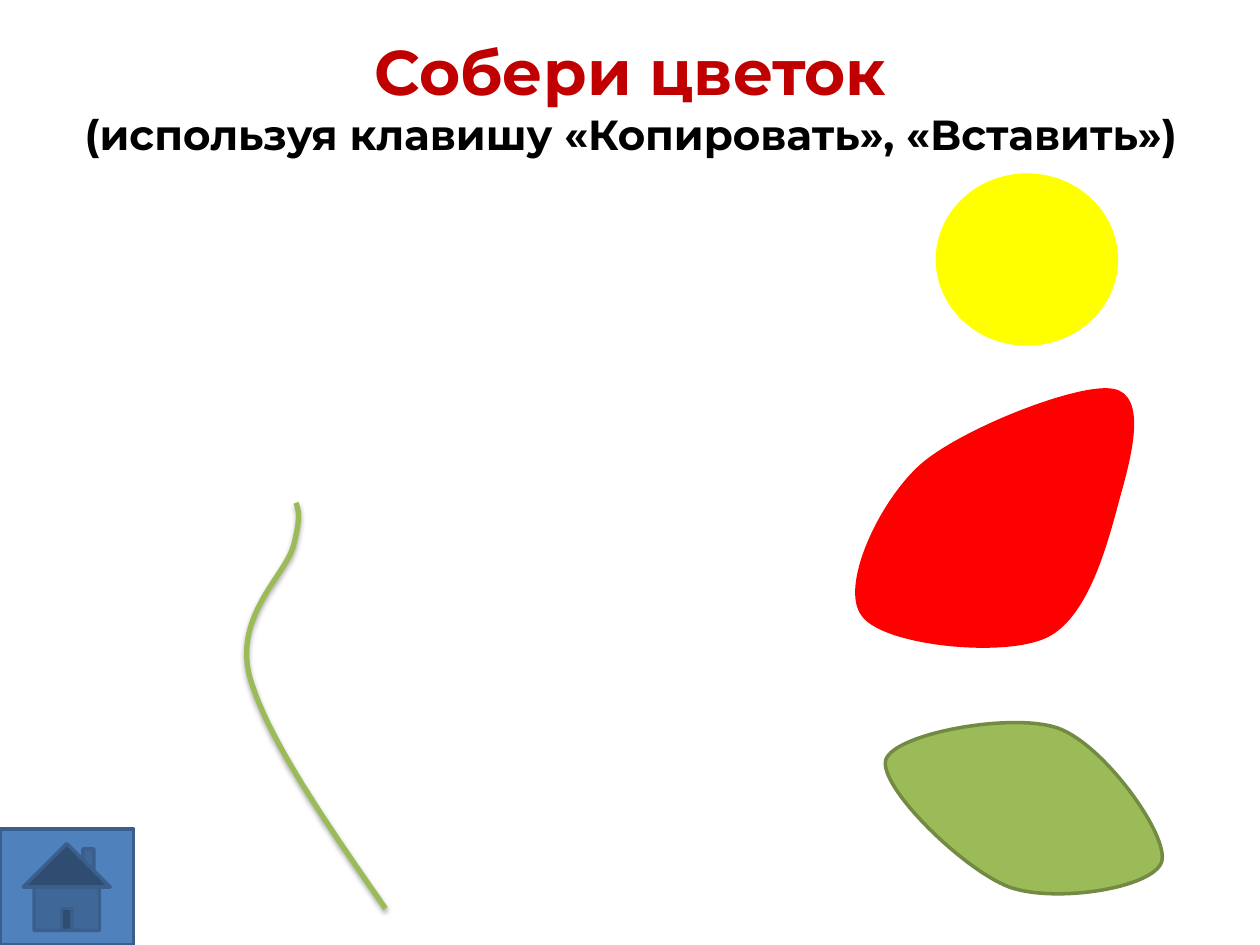
from lxml import etree
from pptx import Presentation
from pptx.dml.color import RGBColor
from pptx.enum.shapes import MSO_SHAPE
from pptx.enum.text import MSO_ANCHOR, MSO_AUTO_SIZE, PP_ALIGN
from pptx.oxml import parse_xml
from pptx.oxml.ns import nsdecls, qn
from pptx.util import Inches, Pt


def color(value):
    return RGBColor.from_string(value)


def add_curve(shapes, points, close):
    """Draw a start point followed by cubic segments of three points each."""
    start, *rest = points
    builder = shapes.build_freeform(*start, scale=Inches(1) / 100)
    builder.add_line_segments(rest, close=close)
    shape = builder.convert_to_shape()
    outline = next(shape._element.iter(qn("a:path")))
    lines = outline.findall(qn("a:lnTo"))[:len(rest)]
    for index in range(0, len(lines), 3):
        cubic = etree.Element(qn("a:cubicBezTo"))
        lines[index].addprevious(cubic)
        for line in lines[index:index + 3]:
            cubic.append(line[0])
            outline.remove(line)
    for extra in outline.findall(qn("a:lnTo")):
        outline.remove(extra)
    return shape


presentation = Presentation()
presentation.slide_width = Inches(10)
presentation.slide_height = Inches(7.5)
slide = presentation.slides.add_slide(presentation.slide_layouts[5])
shapes = slide.shapes

# Title
title = shapes.title
title.left, title.top = Inches(0.2), Inches(0.21)
title.width, title.height = Inches(9.61), Inches(1.11)
frame = title.text_frame
frame.word_wrap = True
frame.auto_size = MSO_AUTO_SIZE.SHAPE_TO_FIT_TEXT
frame.vertical_anchor = MSO_ANCHOR.TOP
frame.text = "Собери цветок\n(используя клавишу «Копировать», «Вставить»)"
for paragraph, size, text_color in zip(frame.paragraphs, (36, 24), ("C00000", "000000")):
    paragraph.alignment = PP_ALIGN.CENTER
    paragraph.font.name = "Montserrat"
    paragraph.font.size = Pt(size)
    paragraph.font.bold = True
    paragraph.font.color.rgb = color(text_color)

# Flower parts, with curve points in hundredths of an inch
stem = add_curve(shapes, [
    (306, 721), (258, 652), (211, 584), (198, 536), (186, 488),
    (227, 456), (233, 433), (239, 410), (237, 405), (235, 399),
], close=False)
center = shapes.add_shape(
    MSO_SHAPE.OVAL, Inches(7.44), Inches(1.39), Inches(1.42), Inches(1.34))
petal = add_curve(shapes, [
    (888, 393), (879, 426), (864, 489), (830, 505), (796, 521),
    (701, 511), (685, 488), (668, 466), (698, 400), (731, 370),
    (764, 341), (857, 305), (883, 310), (909, 314), (897, 361), (888, 393),
], close=True)
leaf = add_curve(shapes, [
    (922, 684), (915, 705), (837, 717), (801, 704), (764, 690),
    (697, 624), (703, 603), (710, 582), (804, 565), (840, 578),
    (876, 591), (928, 663), (922, 684),
], close=True)
home_button = shapes.add_shape(
    MSO_SHAPE.ACTION_BUTTON_HOME, Inches(0), Inches(6.58), Inches(1.06), Inches(0.92))

for shape, fill, line, width in (
    (stem, None, "9BBB59", 3),
    (center, "FFFF00", "FFFF00", 2),
    (petal, "FF0000", "FF0000", 2),
    (leaf, "9BBB59", "738A42", 2),
    (home_button, "4F81BD", "3A5F8C", 2),
):
    shape.shadow.inherit = False
    if fill:
        shape.fill.solid()
        shape.fill.fore_color.rgb = color(fill)
    else:
        shape.fill.background()
    shape.line.color.rgb = color(line)
    shape.line.width = Pt(width)

# Soft shadow below the stem
stem_effects = stem._element.spPr.find(qn("a:effectLst"))
stem_effects.append(parse_xml(
    f'<a:outerShdw {nsdecls("a")} blurRad="{Pt(3.1)}" dist="{Pt(1.8)}" dir="5400000" rotWithShape="0">'
    '<a:srgbClr val="000000"><a:alpha val="35000"/></a:srgbClr></a:outerShdw>'))

presentation.save("out.pptx")
